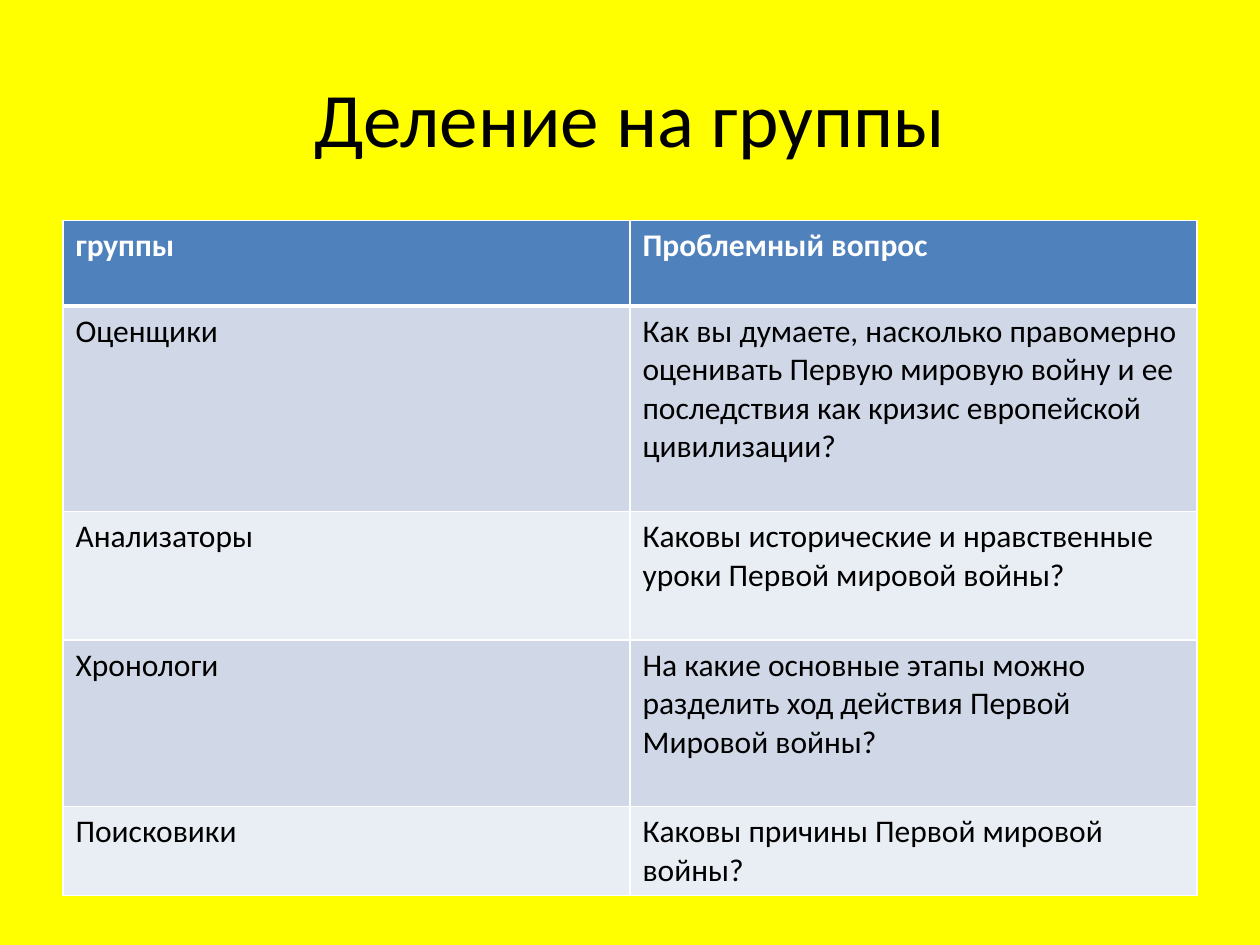
from pptx import Presentation
from pptx.dml.color import RGBColor
from pptx.enum.text import MSO_ANCHOR, PP_ALIGN
from pptx.oxml.ns import qn
from pptx.util import Inches, Pt
from lxml import etree

MIDDLE = MSO_ANCHOR.MIDDLE
CENTER = PP_ALIGN.CENTER

YELLOW = RGBColor(0xFF, 0xFF, 0x00)
BLACK = RGBColor(0x00, 0x00, 0x00)
WHITE = RGBColor(0xFF, 0xFF, 0xFF)
BLUE = RGBColor(0x4F, 0x81, 0xBD)
BANDS = [RGBColor(0xE9, 0xED, 0xF4), RGBColor(0xD0, 0xD8, 0xE8)]
FONT = "Calibri"

ROWS = [
    ("группы", "Проблемный вопрос"),
    ("Оценщики", "Как вы думаете, насколько правомерно оценивать Первую мировую "
                 "войну и ее последствия как кризис европейской цивилизации?"),
    ("Анализаторы", "Каковы исторические и нравственные уроки Первой мировой войны?"),
    ("Хронологи", "На какие основные этапы можно разделить ход действия Первой "
                  "Мировой войны?"),
    ("Поисковики", "Каковы причины Первой мировой войны?"),
]
HEIGHTS = [0.68, 1.63, 1.02, 1.32, 0.71]


def style_text(frame, size, color, bold=False):
    for par in frame.paragraphs:
        for run in par.runs:
            font = run.font
            font.name = FONT
            font.size = Pt(size)
            font.bold = bold
            font.color.rgb = color


def add_title(slide, text):
    box = slide.shapes.add_textbox(Inches(0.5), Inches(0.3), Inches(9), Inches(1.25))
    frame = box.text_frame
    frame.word_wrap = True
    frame.vertical_anchor = MIDDLE
    frame.text = text
    frame.paragraphs[0].alignment = CENTER
    style_text(frame, 44, BLACK)


def add_edge(cell, side, width):
    props = cell._tc.get_or_add_tcPr()
    line = etree.SubElement(props, qn(f"a:ln{side}"), w=str(Pt(width)))
    fill = etree.SubElement(line, qn("a:solidFill"))
    etree.SubElement(fill, qn("a:srgbClr"), val=str(WHITE))


def style_cell(cell, row):
    head = row == 0
    # A thick rule parts the header from the body.
    widths = {"L": 1, "R": 1, "T": 3 if row == 1 else 1, "B": 3 if head else 1}
    for side, width in widths.items():
        add_edge(cell, side, width)
    cell.fill.solid()
    cell.fill.fore_color.rgb = BLUE if head else BANDS[row % 2]
    style_text(cell.text_frame, 18, WHITE if head else BLACK, head)


def add_groups(slide):
    frame = slide.shapes.add_table(len(ROWS), 2, Inches(0.5), Inches(1.75),
                                   Inches(9), Inches(sum(HEIGHTS)))
    table = frame.table
    for row, (texts, height) in enumerate(zip(ROWS, HEIGHTS)):
        table.rows[row].height = Inches(height)
        for col, text in enumerate(texts):
            cell = table.cell(row, col)
            cell.text_frame.text = text
            style_cell(cell, row)


def main():
    deck = Presentation()
    deck.slide_width, deck.slide_height = Inches(10), Inches(7.5)
    slide = deck.slides.add_slide(deck.slide_layouts[6])
    back = slide.background.fill
    back.solid()
    back.fore_color.rgb = YELLOW
    add_title(slide, "Деление на группы")
    add_groups(slide)
    deck.save("out.pptx")


if __name__ == "__main__":
    main()
